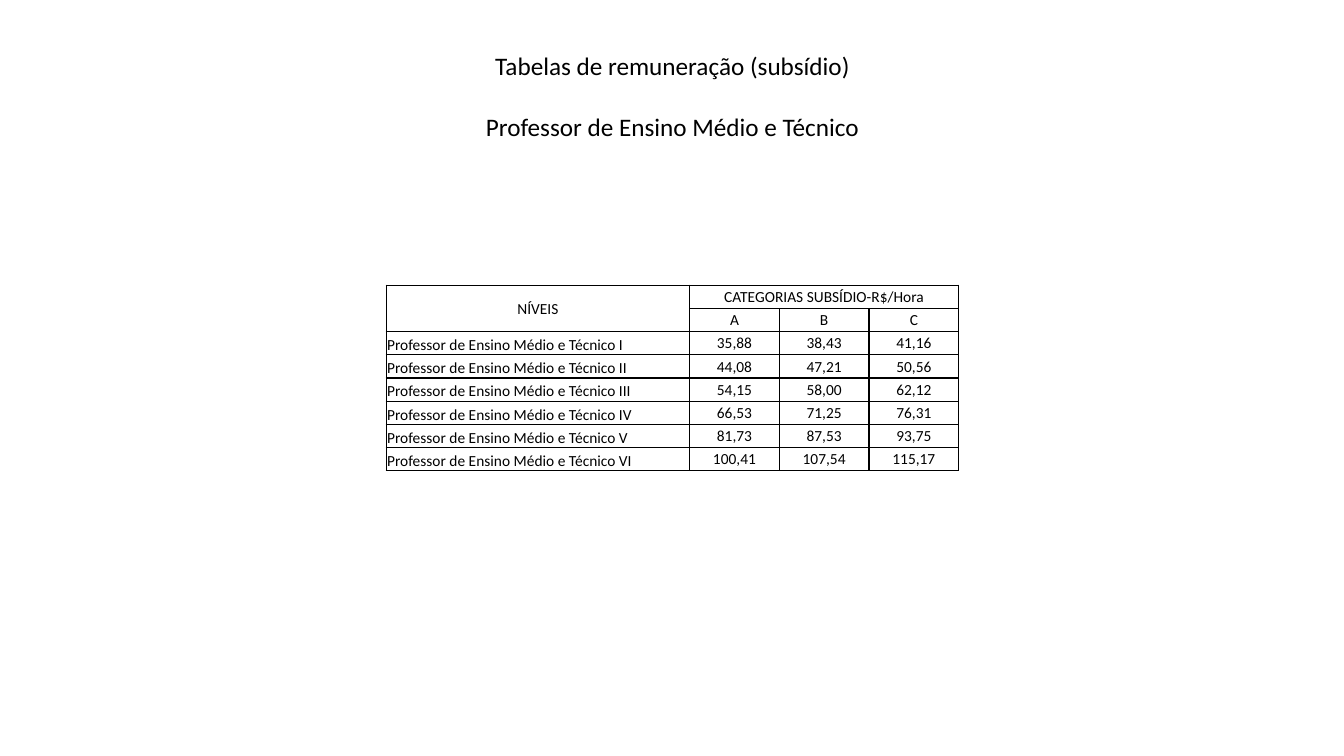
"""Build the slide with the hourly pay table for secondary and technical teachers."""
from dataclasses import dataclass

from lxml import etree
from pptx import Presentation
from pptx import util as u
from pptx.dml.color import RGBColor
from pptx.enum import text
from pptx.oxml import ns

BLACK = RGBColor(0x00, 0x00, 0x00)
FONT = "Calibri"
ROLE = "Professor de Ensino Médio e Técnico"
CATEGORIES = ("A", "B", "C")
COLUMN_WIDTHS = (3.01, 0.89, 0.89, 0.89)
ROW_HEIGHT = 0.23
HEADER_ROWS = 2
BORDER_POINTS = 1


@dataclass(frozen=True)
class Level:
    name: str
    rates: tuple[str, str, str]


LEVELS = (
    Level("I", ("35,88", "38,43", "41,16")),
    Level("II", ("44,08", "47,21", "50,56")),
    Level("III", ("54,15", "58,00", "62,12")),
    Level("IV", ("66,53", "71,25", "76,31")),
    Level("V", ("81,73", "87,53", "93,75")),
    Level("VI", ("100,41", "107,54", "115,17")),
)


def write(para, words: str, *, size: float, align=text.PP_ALIGN.CENTER, before: float = 0) -> None:
    para.alignment = align
    para.space_before = u.Pt(before)
    span = para.add_run()
    span.text = words
    span.font.name = FONT
    span.font.size = u.Pt(size)
    span.font.color.rgb = BLACK


def add_title(page) -> None:
    box = page.shapes.add_textbox(u.Inches(1.99), u.Inches(0.45), u.Inches(9.36), u.Inches(1.01))
    frame = box.text_frame
    frame.word_wrap = True
    write(frame.paragraphs[0], "Tabelas de remuneração (subsídio)", size=18)
    write(frame.add_paragraph(), ROLE, size=18, before=22)


def format_cell(cell) -> None:
    cell.margin_left = cell.margin_top = cell.margin_right = u.Inches(0.01)
    cell.margin_bottom = 0
    cell.vertical_anchor = text.MSO_ANCHOR.MIDDLE
    properties = cell._tc.get_or_add_tcPr()
    for side in ("a:lnL", "a:lnR", "a:lnT", "a:lnB"):
        line = etree.SubElement(properties, ns.qn(side), w=str(u.Pt(BORDER_POINTS)))
        fill = etree.SubElement(line, ns.qn("a:solidFill"))
        etree.SubElement(fill, ns.qn("a:srgbClr"), val=str(BLACK))
    cell.fill.background()


def write_cell(cell, words: str, *, align=text.PP_ALIGN.CENTER) -> None:
    write(cell.text_frame.paragraphs[0], words, size=11, align=align)


def add_pay_table(page) -> None:
    row_count = HEADER_ROWS + len(LEVELS)
    table = page.shapes.add_table(
        row_count, len(COLUMN_WIDTHS), u.Inches(3.83), u.Inches(2.83),
        u.Inches(sum(COLUMN_WIDTHS)), u.Inches(ROW_HEIGHT * row_count),
    ).table
    table.first_row = table.horz_banding = False
    for column, width in zip(table.columns, COLUMN_WIDTHS):
        column.width = u.Inches(width)
    for row in table.rows:
        row.height = u.Inches(ROW_HEIGHT)
    for cell in table.iter_cells():
        format_cell(cell)

    table.cell(0, 0).merge(table.cell(1, 0))
    table.cell(0, 1).merge(table.cell(0, len(CATEGORIES)))
    write_cell(table.cell(0, 0), "NÍVEIS")
    write_cell(table.cell(0, 1), "CATEGORIAS SUBSÍDIO-R$/Hora")
    for column, category in enumerate(CATEGORIES, start=1):
        write_cell(table.cell(1, column), category)
    for row, level in enumerate(LEVELS, start=HEADER_ROWS):
        label = table.cell(row, 0)
        label.vertical_anchor = text.MSO_ANCHOR.BOTTOM
        write_cell(label, f"{ROLE} {level.name}", align=text.PP_ALIGN.LEFT)
        for column, rate in enumerate(level.rates, start=1):
            write_cell(table.cell(row, column), rate)


def main() -> None:
    deck = Presentation()
    deck.slide_width, deck.slide_height = u.Inches(13.33), u.Inches(7.5)
    page = deck.slides.add_slide(deck.slide_layouts[6])
    add_title(page)
    add_pay_table(page)
    deck.save("out.pptx")


if __name__ == "__main__":
    main()
